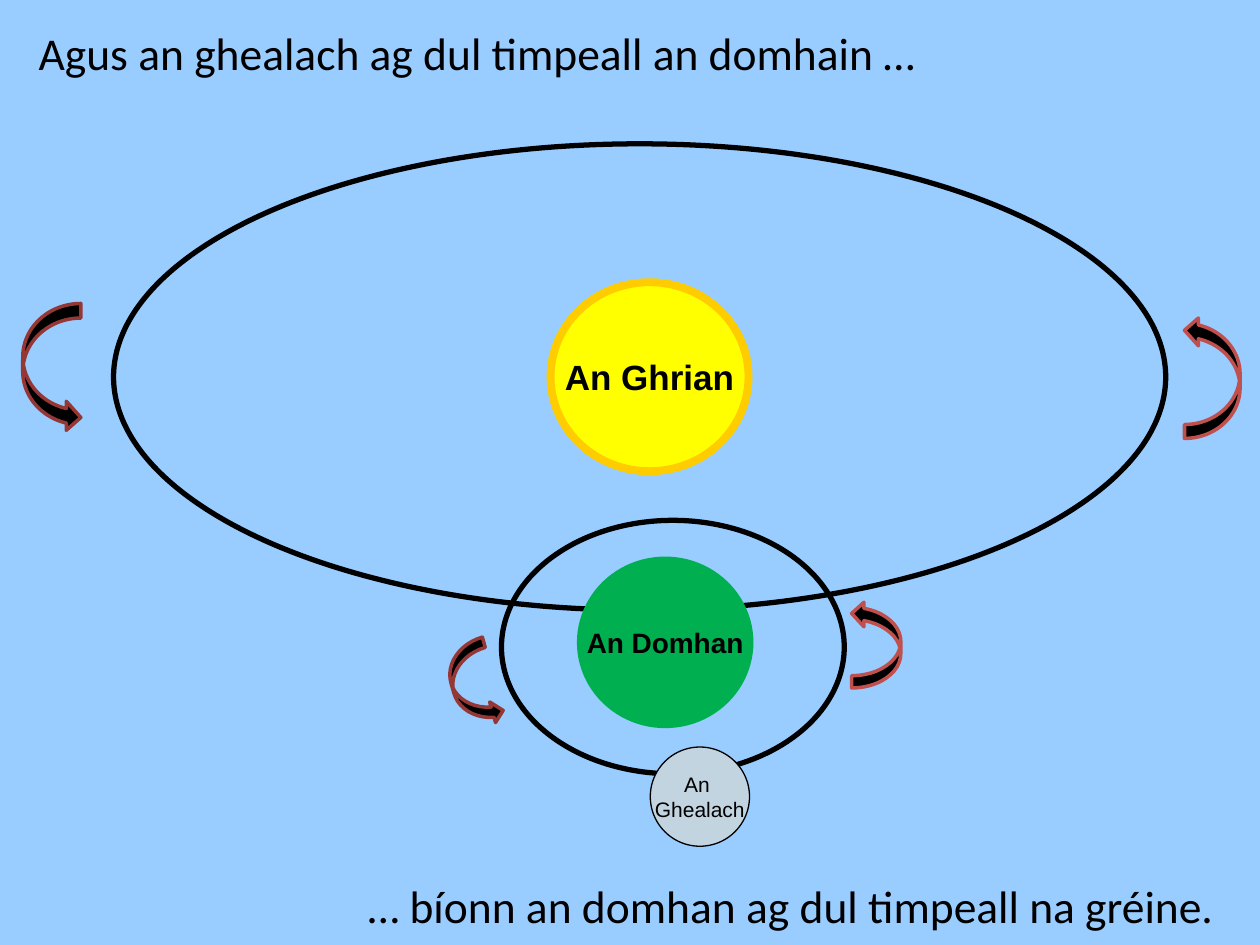
from pptx import Presentation
from pptx import util as u
from pptx.dml.color import RGBColor
from pptx.enum import shapes, text

KIND = shapes.MSO_SHAPE
BLACK = "000000"


def paint(form, color):
    form.solid()
    form.fore_color.rgb = RGBColor.from_string(color)


def place(slide, kind, box, fill, line, width):
    shape = slide.shapes.add_shape(kind, *map(u.Cm, box))
    shape.shadow.inherit = False
    if fill:
        paint(shape.fill, fill)
    else:
        shape.fill.background()
    paint(shape.line.fill, line)
    shape.line.width = u.Pt(width)
    return shape


def write(frame, words, size, font, bold=False, align=None):
    frame.text = words
    for para in frame.paragraphs:
        para.alignment = align
        for run in para.runs:
            run.font.size, run.font.name, run.font.bold = u.Pt(size), font, bold
            paint(run.font.fill, BLACK)


def body(slide, box, words, size, bold, fill, line, width):
    """Draw a labelled sun, planet or moon."""
    frame = place(slide, KIND.OVAL, box, fill, line, width).text_frame
    frame.word_wrap = False
    frame.vertical_anchor = text.MSO_ANCHOR.MIDDLE
    write(frame, words, size, "Arial", bold, text.PP_ALIGN.CENTER)


def arrow(slide, box, line, turn=0, flip=False):
    shape = place(slide, KIND.CURVED_RIGHT_ARROW, box, BLACK, line, 2)
    shape.rotation = turn
    if flip:
        frame = shape.element.spPr.xfrm
        frame.set("flipH", "1")
        frame.set("flipV", "1")


def system(slide, box, bodies, left, right, turn=0):
    """Draw an orbit, its bodies and two arrows, all relative to the orbit's box."""
    def inside(part):
        return (box[0] + part[0], box[1] + part[1], *part[2:])

    place(slide, KIND.OVAL, box, None, BLACK, 3)
    for part, *look in bodies:
        body(slide, inside(part), *look)
    arrow(slide, inside(left), "953735", turn)
    arrow(slide, inside(right), "C0504D", flip=True)


def caption(slide, box, words):
    frame = slide.shapes.add_textbox(*map(u.Cm, box)).text_frame
    frame.word_wrap = True
    frame.auto_size = text.MSO_AUTO_SIZE.SHAPE_TO_FIT_TEXT
    write(frame, words, 26, "Calibri")


def main():
    deck = Presentation()
    deck.slide_width, deck.slide_height = u.Cm(25.4), u.Cm(19.05)
    slide = deck.slides.add_slide(deck.slide_layouts[6])
    paint(slide.background.fill, "99CCFF")

    sun = ((8.81, 2.79, 3.99, 3.81), "An Ghrian", 20, True, "FFFF00", "FFCC00", 4.5)
    earth = ((1.6, 0.81, 3.4, 3.3), "An Domhan", 16, True, "00B050", "00B050", 4.5)
    moon = ((3, 4.57, 2, 2), "An \nGhealach", 12, False, "C3D4E1", BLACK, 0.75)

    system(slide, (2.29, 2.9, 21.21, 9.4), [sun],
           (-1.83, 3.22, 1.17, 2.59), (21.59, 3.48, 1.12, 2.46))
    system(slide, (10.11, 10.49, 6.91, 5.11), [earth, moon],
           (-0.99, 2.44, 0.86, 1.75), (7.06, 1.63, 0.99, 1.75), turn=344.1)
    caption(slide, (0.53, 0.38, 24.2, 1.37),
            "Agus an ghealach ag dul timpeall an domhain …")
    caption(slide, (6.96, 17.58, 18, 1.37),
            " … bíonn an domhan ag dul timpeall na gréine.")
    deck.save("out.pptx")


if __name__ == "__main__":
    main()
